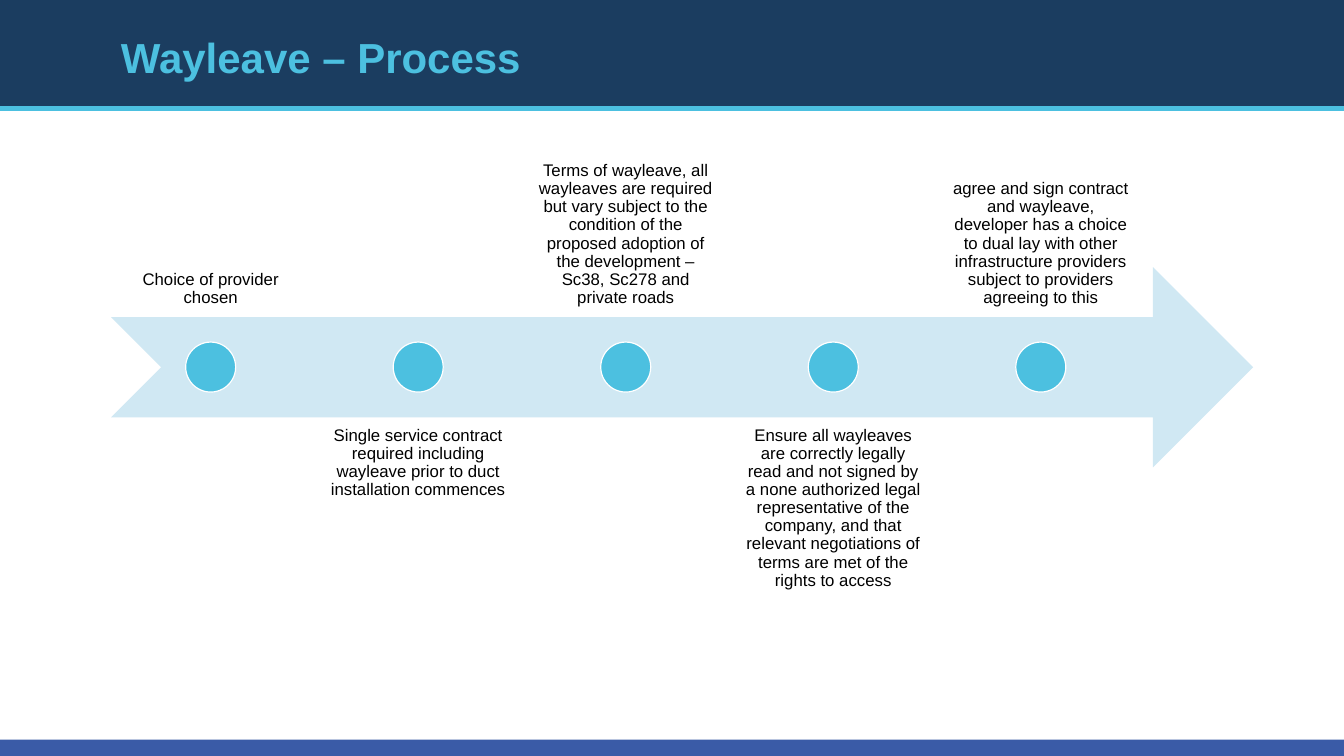
import pptx
import pptx.dml.color
import pptx.enum.shapes
import pptx.enum.text
import pptx.util
from lxml import etree

Cm, Pt = pptx.util.Cm, pptx.util.Pt
RGBColor = pptx.dml.color.RGBColor
SHAPE = pptx.enum.shapes.MSO_SHAPE
ANCHOR = pptx.enum.text.MSO_ANCHOR
ALIGN = pptx.enum.text.PP_ALIGN

NAVY = RGBColor(0x1B, 0x3D, 0x60)
CYAN = RGBColor(0x4C, 0xC0, 0xE0)
BLUE = RGBColor(0x3A, 0x5B, 0xA7)
PALE = RGBColor(0xD0, 0xE8, 0xF3)
WHITE = RGBColor(0xFF, 0xFF, 0xFF)
BLACK = RGBColor(0, 0, 0)

STEPS = [
    "Choice of provider chosen",
    "Single service contract required including wayleave prior to duct "
    "installation commences",
    "Terms of wayleave, all wayleaves are required but vary subject to the "
    "condition of the proposed adoption of the development – Sc38, Sc278 and "
    "private roads",
    "Ensure all wayleaves are correctly legally read and not signed by a none "
    "authorized legal representative of the company, and that relevant "
    "negotiations of terms are met of the rights to access",
    "agree and sign contract and wayleave, developer has a choice to dual lay "
    "with other infrastructure providers subject to providers agreeing to this",
]

prs = pptx.Presentation()
prs.slide_width, prs.slide_height = Cm(33.87), Cm(19.05)
s = prs.slides.add_slide(prs.slide_layouts[6])


def add_filled(kind, x, y, w, h, color):
    sp = s.shapes.add_shape(kind, Cm(x), Cm(y), Cm(w), Cm(h))
    sp.shadow.inherit = False
    sp.fill.solid()
    sp.fill.fore_color.rgb = color
    sp.line.fill.background()
    return sp


def add_text(text, x, y, w, h, size=12, color=BLACK, bold=False,
             align=ALIGN.CENTER, anchor=ANCHOR.TOP, inset=0.23, spacing=0.9):
    tf = s.shapes.add_textbox(Cm(x), Cm(y), Cm(w), Cm(h)).text_frame
    tf.word_wrap = True
    tf.vertical_anchor = anchor
    tf.margin_left = tf.margin_right = Cm(inset)
    tf.margin_top = tf.margin_bottom = Cm(inset)
    p = tf.paragraphs[0]
    p.alignment = align
    p.line_spacing = spacing
    r = p.add_run()
    r.text = text
    r.font.name = "Arial"
    r.font.size = Pt(size)
    r.font.bold = bold
    r.font.color.rgb = color


# Header and footer bands
add_filled(SHAPE.RECTANGLE, 0, 18.64, 33.87, 0.41, BLUE)
add_filled(SHAPE.RECTANGLE, 0, 0, 33.87, 2.72, NAVY)
rule = s.shapes.add_connector(pptx.enum.shapes.MSO_CONNECTOR.STRAIGHT,
                              0, Cm(2.73), prs.slide_width, Cm(2.73))
rule.line.color.rgb = CYAN
rule.line.width = Pt(3.5)
etree.SubElement(rule._element.spPr, pptx.oxml.ns.qn("a:effectLst"))
add_text("Wayleave – Process", 2.8, 0.18, 28.78, 2.49, size=30, color=CYAN,
         bold=True, align=ALIGN.LEFT, anchor=ANCHOR.MIDDLE, inset=0.25,
         spacing=1.0)

# Process arrow, with step texts alternating above and below it
add_filled(SHAPE.NOTCHED_RIGHT_ARROW, 2.8, 6.73, 28.78, 5.05, PALE)
STEP_PITCH, STEP_W, STEP_H, DOT = 5.23, 4.98, 5.05, 1.26
for i, step in enumerate(STEPS):
    x = 2.82 + i * STEP_PITCH
    above = i % 2 == 0
    add_text(step, x, 2.92 if above else 10.52, STEP_W, STEP_H,
             anchor=ANCHOR.BOTTOM if above else ANCHOR.TOP)
    dot = add_filled(SHAPE.OVAL, x + (STEP_W - DOT) / 2, 8.62, DOT, DOT, CYAN)
    dot.line.color.rgb = WHITE
    dot.line.width = Pt(0.85)

prs.save("out.pptx")
